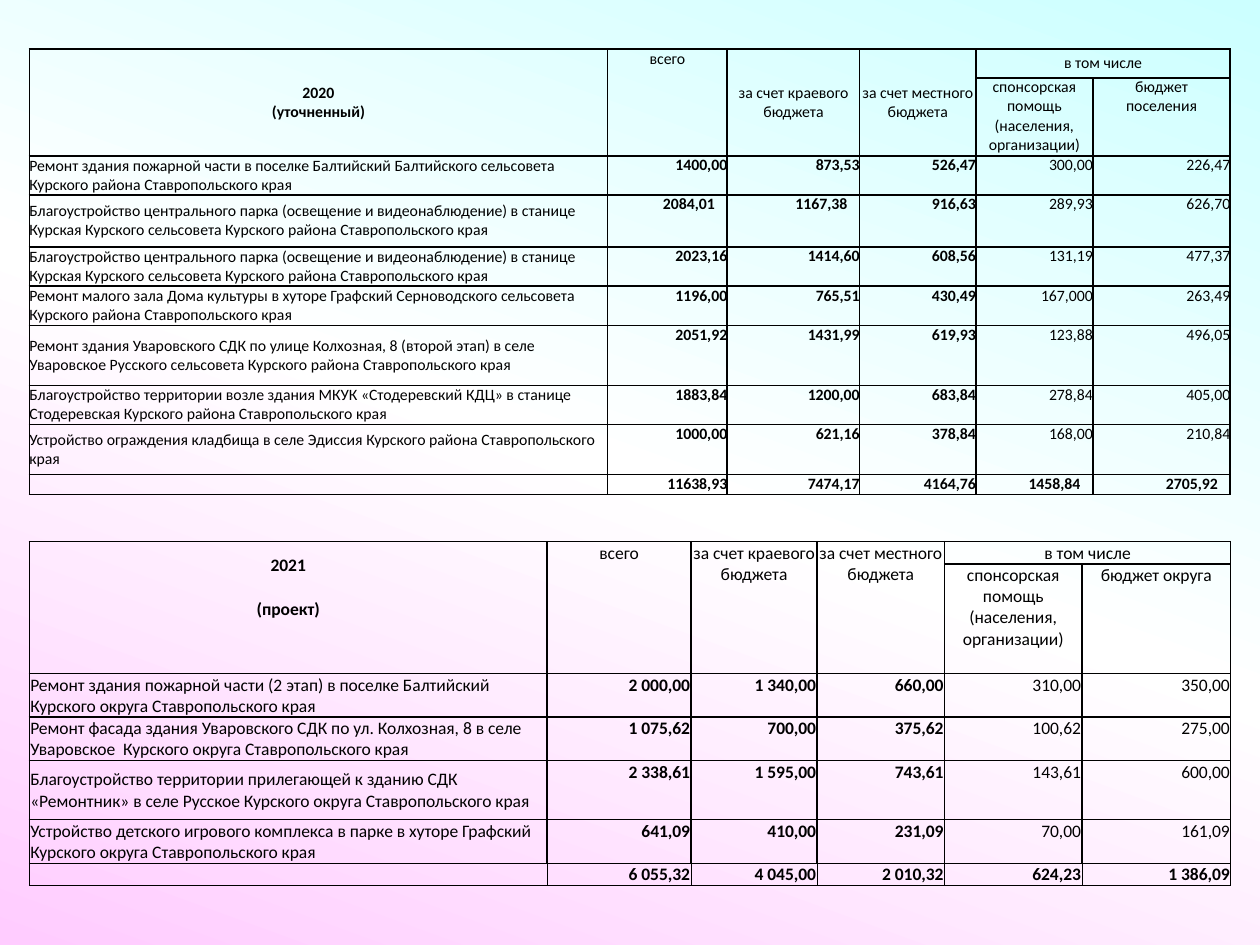
import copy
import lxml.etree
import pptx
import pptx.dml.color
import pptx.enum.text
import pptx.oxml.ns
import pptx.util

Cm = pptx.util.Cm
Pt = pptx.util.Pt
qn = pptx.oxml.ns.qn
ALIGN = pptx.enum.text.PP_ALIGN
ANCHOR = pptx.enum.text.MSO_ANCHOR
NO_GRID_STYLE = "{2D5ABB26-0587-4C30-8999-92F81FD0307C}"
SPONSOR = "спонсорская помощь (населения, организации)"

# Header entries: (row, column): (text, row span, column span, bold, anchor)
BUDGET_2020 = {
    "box": (0.59, 0.99),
    "columns": [11.66, 2.41, 2.67, 2.34, 2.36, 2.77],
    "rows": [0.58, 1.57, 0.79, 1.05, 0.79, 0.79, 1.21, 0.79, 1.01, 0.4],
    "size": 9, "margin": 0, "total_line": 1, "total_anchor": ANCHOR.TOP,
    "header_rows": 2,
    "header": {
        (0, 0): ("2020\n(уточненный)", 2, 1, True, ANCHOR.MIDDLE),
        (0, 1): ("всего", 2, 1, False, ANCHOR.TOP),
        (0, 2): ("за счет краевого бюджета", 2, 1, False, ANCHOR.MIDDLE),
        (0, 3): ("за счет местного бюджета", 2, 1, False, ANCHOR.MIDDLE),
        (0, 4): ("в том числе", 1, 2, False, ANCHOR.MIDDLE),
        (1, 4): (SPONSOR, 1, 1, False, ANCHOR.TOP),
        (1, 5): ("бюджет\nпоселения", 1, 1, False, ANCHOR.TOP),
    },
    "open_below": set(),
    "indented": {(3, 1), (3, 2), (9, 4), (9, 5)},
    "body": [
        ("Ремонт здания пожарной части в поселке Балтийский Балтийского сельсовета Курского района Ставропольского края",
         "1400,00", "873,53", "526,47", "300,00", "226,47"),
        ("Благоустройство центрального парка (освещение и видеонаблюдение) в станице Курская Курского сельсовета Курского района Ставропольского края",
         "2084,01", "1167,38", "916,63", "289,93", "626,70"),
        ("Благоустройство центрального парка (освещение и видеонаблюдение) в станице Курская Курского сельсовета Курского района Ставропольского края",
         "2023,16", "1414,60", "608,56", "131,19", "477,37"),
        ("Ремонт малого зала Дома культуры в хуторе Графский Серноводского сельсовета Курского района Ставропольского края",
         "1196,00", "765,51", "430,49", "167,000", "263,49"),
        ("Ремонт здания Уваровского СДК по улице Колхозная, 8 (второй этап) в селе Уваровское Русского сельсовета Курского района Ставропольского края",
         "2051,92", "1431,99", "619,93", "123,88", "496,05"),
        ("Благоустройство территории возле здания МКУК «Стодеревский КДЦ» в станице Стодеревская Курского района Ставропольского края",
         "1883,84", "1200,00", "683,84", "278,84", "405,00"),
        ("Устройство ограждения кладбища в селе Эдиссия Курского района Ставропольского края",
         "1000,00", "621,16", "378,84", "168,00", "210,84"),
        ("", "11638,93", "7474,17", "4164,76", "1458,84", "2705,92"),
    ],
}

BUDGET_2021 = {
    "box": (0.59, 10.92),
    "columns": [10.44, 2.9, 2.54, 2.57, 2.77, 3],
    "rows": [0.43, 0.5, 0.83, 0.87, 0.88, 0.87, 1.19, 0.88, 0.44],
    "size": 10, "margin": 0.02, "total_line": 0.5, "total_anchor": ANCHOR.BOTTOM,
    "header_rows": 4,
    "header": {
        (0, 0): ("2021", 2, 1, True, ANCHOR.MIDDLE),
        (2, 0): ("(проект)", 1, 1, True, ANCHOR.MIDDLE),
        (0, 1): ("всего", 4, 1, False, ANCHOR.TOP),
        (0, 2): ("за счет краевого бюджета", 4, 1, False, ANCHOR.TOP),
        (0, 3): ("за счет местного бюджета", 4, 1, False, ANCHOR.TOP),
        (0, 4): ("в том числе", 1, 2, False, ANCHOR.MIDDLE),
        (1, 4): (SPONSOR, 3, 1, False, ANCHOR.TOP),
        (1, 5): ("бюджет округа", 2, 1, False, ANCHOR.TOP),
    },
    "open_below": {(0, 0), (1, 0), (2, 0), (1, 5), (2, 5)},
    "indented": set(),
    "body": [
        ("Ремонт здания пожарной части (2 этап) в поселке Балтийский Курского округа Ставропольского края",
         "2 000,00", "1 340,00", "660,00", "310,00", "350,00"),
        ("Ремонт фасада здания Уваровского СДК по ул. Колхозная, 8 в селе Уваровское  Курского округа Ставропольского края",
         "1 075,62", "700,00", "375,62", "100,62", "275,00"),
        ("Благоустройство территории прилегающей к зданию СДК «Ремонтник» в селе Русское Курского округа Ставропольского края",
         "2 338,61", "1 595,00", "743,61", "143,61", "600,00"),
        ("Устройство детского игрового комплекса в парке в хуторе Графский Курского округа Ставропольского края",
         "641,09", "410,00", "231,09", "70,00", "161,09"),
        ("", "6 055,32", "4 045,00", "2 010,32", "624,23", "1 386,09"),
    ],
}


def color(value):
    return pptx.dml.color.RGBColor.from_string(value)


def set_attributes(target, values):
    for name, value in values.items():
        setattr(target, name, value)


def paint_background(slide):
    fill = slide.background.fill
    fill.gradient()
    fill.gradient_angle = 250  # counter-clockwise
    stop_list = next(slide.element.iter(qn("a:gsLst")))
    stop_list.insert(1, copy.deepcopy(stop_list[0]))
    stops = zip(fill.gradient_stops, (0, 0.5, 1), ("CCFFFF", "FFFFFF", "FFCCFF"))
    for stop, position, value in stops:
        stop.position = position
        stop.color.rgb = color(value)


def set_borders(cell, widths):
    properties = cell._tc.get_or_add_tcPr()
    for side, width in widths.items():
        line = lxml.etree.SubElement(properties, qn(f"a:ln{side}"), w=str(Pt(width)))
        if width:
            solid = lxml.etree.SubElement(line, qn("a:solidFill"))
            lxml.etree.SubElement(solid, qn("a:srgbClr"), val="000000")
        else:
            lxml.etree.SubElement(line, qn("a:noFill"))


def write_cell(cell, text, size, align, bold):
    cell.text = text
    for paragraph in cell.text_frame.paragraphs:
        paragraph.alignment = align
        for run in paragraph.runs:
            set_attributes(run.font, {"name": "Calibri", "size": Pt(size), "bold": bold})
            run.font.color.rgb = color("000000")
        if not paragraph.runs:  # keeps empty cells from stretching their row
            lxml.etree.SubElement(paragraph._p, qn("a:endParaRPr"), sz=str(size * 100))


def add_budget_table(slide, budget):
    columns, rows = budget["columns"], budget["rows"]
    left, top = budget["box"]
    table = slide.shapes.add_table(len(rows), len(columns), Cm(left), Cm(top),
                                   Cm(sum(columns)), Cm(sum(rows))).table
    set_attributes(table, {"first_row": False, "horz_banding": False})
    next(table._tbl.iter(qn("a:tableStyleId"))).text = NO_GRID_STYLE
    for column, width in zip(table.columns, columns):
        column.width = Cm(width)
    for row, height in zip(table.rows, rows):
        row.height = Cm(height)

    first_body, last = budget["header_rows"], len(rows) - 1
    for r in range(len(rows)):
        for c in range(len(columns)):
            cell = table.cell(r, c)
            # Text and alignment
            if r < first_body:
                text, _, _, bold, anchor = budget["header"].get(
                    (r, c), ("", 1, 1, False, ANCHOR.TOP))
                align = ALIGN.CENTER
            else:
                text = budget["body"][r - first_body][c]
                bold = r == last or 1 <= c <= 3
                align = ALIGN.RIGHT if c else ALIGN.LEFT
                anchor = ANCHOR.TOP if c else ANCHOR.MIDDLE
                if r == last:
                    anchor = budget["total_anchor"]
            write_cell(cell, text, budget["size"], align, bold)
            margin = Cm(budget["margin"])
            set_attributes(cell, {
                "vertical_anchor": anchor, "margin_left": margin, "margin_top": margin,
                "margin_right": Cm(0.25) if (r, c) in budget["indented"] else margin,
                "margin_bottom": 0})
            # Borders, lighter around the total row
            side = budget["total_line"] if r == last else 1
            above = 0 if (r - 1, c) in budget["open_below"] else side
            below = budget["total_line"] if r >= last - 1 else 1
            if (r, c) in budget["open_below"]:
                below = 0
            set_borders(cell, {"L": side, "R": side, "T": above, "B": below})
            cell.fill.background()

    # Merged header cells
    for (r, c), (_, row_span, column_span, _, _) in budget["header"].items():
        if row_span * column_span > 1:
            table.cell(r, c).merge(table.cell(r + row_span - 1, c + column_span - 1))


def main():
    presentation = pptx.Presentation()
    set_attributes(presentation, {"slide_width": Cm(25.4), "slide_height": Cm(19.05)})
    slide = presentation.slides.add_slide(presentation.slide_layouts[6])
    paint_background(slide)
    for budget in (BUDGET_2020, BUDGET_2021):
        add_budget_table(slide, budget)
    presentation.save("out.pptx")


if __name__ == "__main__":
    main()
